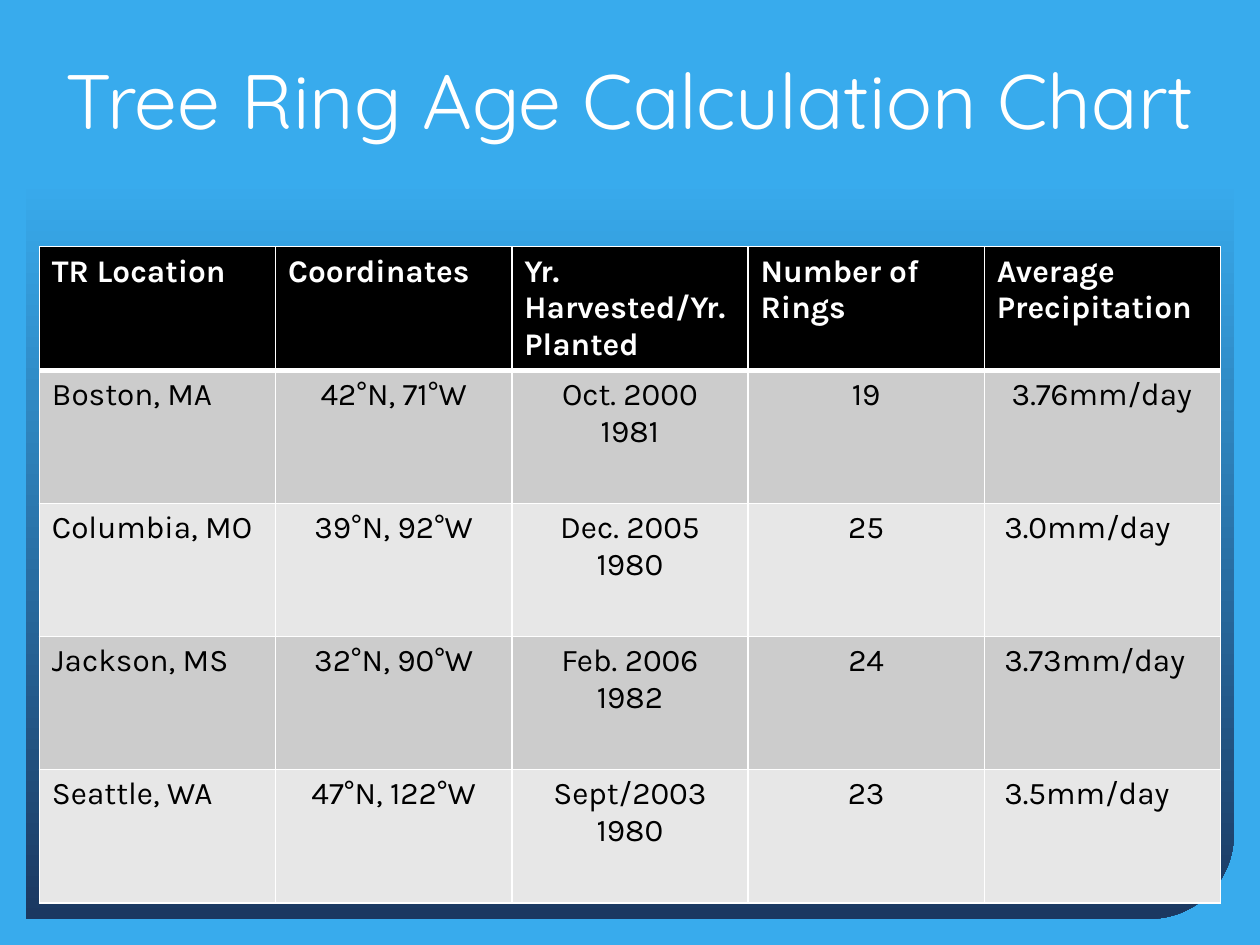
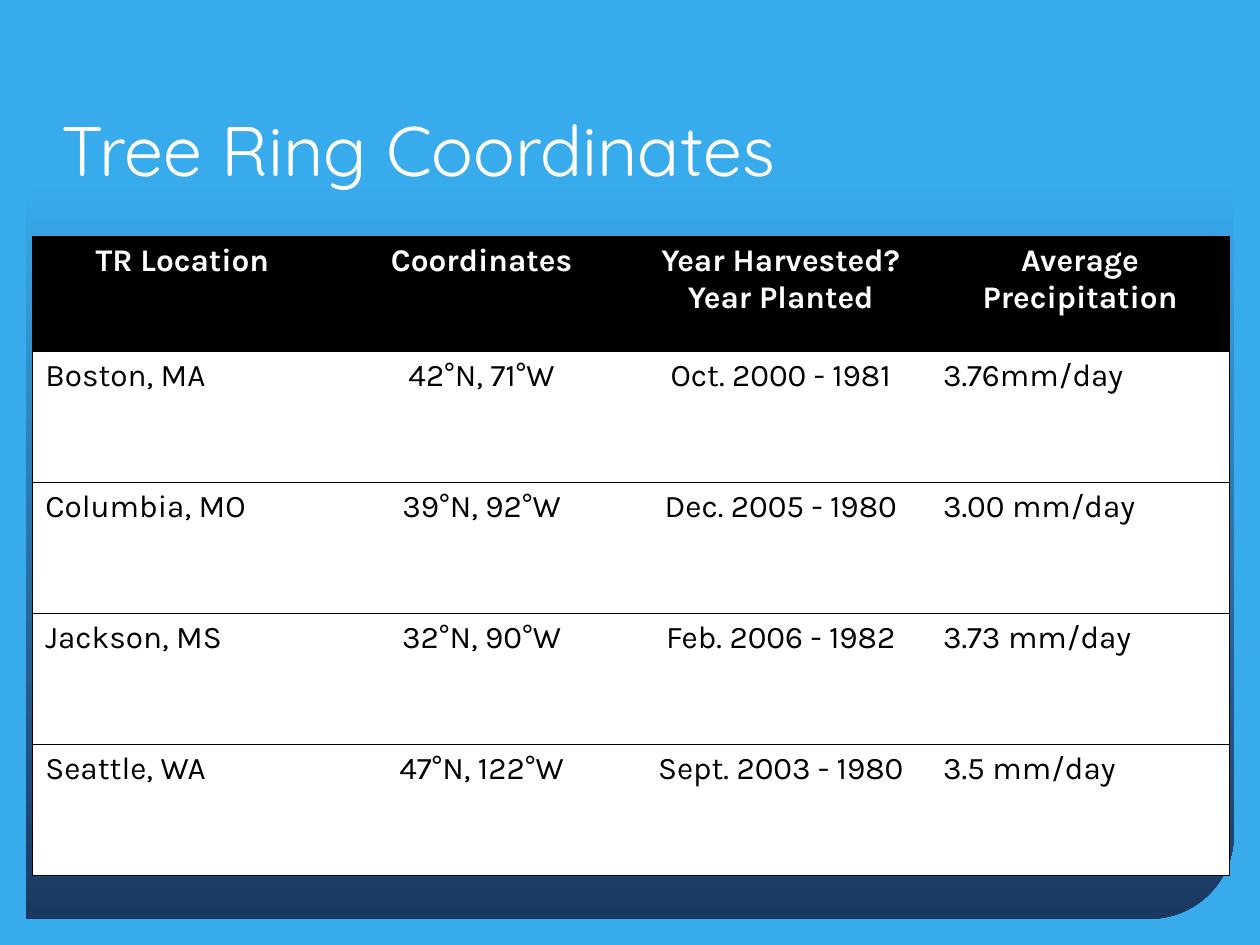
from dataclasses import dataclass

from lxml.etree import SubElement
from pptx import Presentation
from pptx.dml.color import RGBColor
from pptx.enum.shapes import MSO_SHAPE
from pptx.enum.text import MSO_ANCHOR, MSO_AUTO_SIZE, PP_ALIGN
from pptx.oxml.ns import qn
from pptx.util import Pt


@dataclass(frozen=True)
class Theme:
    sky: RGBColor = RGBColor(0x38, 0xAB, 0xED)
    navy: RGBColor = RGBColor(0x1B, 0x38, 0x61)
    black: RGBColor = RGBColor(0, 0, 0)
    white: RGBColor = RGBColor(0xFF, 0xFF, 0xFF)
    dark_band: RGBColor = RGBColor(0xCC, 0xCC, 0xCC)
    light_band: RGBColor = RGBColor(0xE7, 0xE7, 0xE7)
    title_font: str = "Quicksand"
    body_font: str = "Karla"
    chart_title_size: int = 44
    coordinates_title_size: int = 40
    cell_size: int = 18


THEME = Theme()
LEFT, CENTER = PP_ALIGN.LEFT, PP_ALIGN.CENTER

SITES = [
    ("Boston, MA", "42°N, 71°W"),
    ("Columbia, MO", "39°N, 92°W"),
    ("Jackson, MS", "32°N, 90°W"),
    ("Seattle, WA", "47°N, 122°W"),
]
AGE_HEADER = ("TR Location", "Coordinates", "Yr. Harvested/Yr. Planted",
              "Number of Rings", "Average Precipitation")
AGES = [
    ("Oct. 2000\n1981", "19", "3.76mm/day"),
    ("Dec. 2005\n1980", "25", "3.0mm/day"),
    ("Feb. 2006\n1982", "24", "3.73mm/day"),
    ("Sept/2003\n1980", "23", "3.5mm/day"),
]
COORDINATES_HEADER = ("TR Location", "Coordinates",
                      "Year Harvested?\nYear Planted", "Average Precipitation")
YEARS = [
    ("Oct. 2000 - 1981", "3.76mm/day"),
    ("Dec. 2005 - 1980", "3.00 mm/day"),
    ("Feb. 2006 - 1982", "3.73 mm/day"),
    ("Sept. 2003 - 1980", "3.5 mm/day"),
]


def add_run(p, text, font, size, color, bold=False):
    r = p.add_run()
    r.text = text
    r.font.name = font
    r.font.size = Pt(size)
    r.font.bold = bold
    r.font.color.rgb = color


def style_master(prs, slide):
    """Give the master its background and gradient panel, drawn first on slide."""
    master = prs.slide_master
    master.background.fill.solid()
    master.background.fill.fore_color.rgb = THEME.sky
    panel = slide.shapes.add_shape(MSO_SHAPE.ROUND_2_DIAG_RECTANGLE,
                                   Pt(15), Pt(15), Pt(690), Pt(510))
    panel.shadow.inherit = False
    panel.adjustments[0] = 0.094
    panel.adjustments[1] = 0
    panel.line.fill.background()
    panel.fill.gradient()
    panel.fill.gradient_angle = 270
    stops = [(0.17, THEME.sky), (1, THEME.navy)]
    for stop, (position, color) in zip(panel.fill.gradient_stops, stops):
        stop.position = position
        stop.color.rgb = color
    master.shapes._spTree.insert(2, panel._element)


def set_title(slide, text, box, size, align, anchor, indent=0):
    title = slide.shapes.title
    title.left, title.top, title.width, title.height = map(Pt, box)
    tf = title.text_frame
    tf.word_wrap = True
    tf.auto_size = MSO_AUTO_SIZE.NONE
    tf.vertical_anchor = anchor
    tf.margin_left = Pt(7.2 + indent)
    p = tf.paragraphs[0]
    p.alignment = align
    add_run(p, text, THEME.title_font, size, THEME.white)


def set_borders(cell, **sides):
    """Set sides L, R, T and B to a (colour, width) pair, or None for no line."""
    tc_pr = cell._tc.get_or_add_tcPr()
    for side in "LRTB":
        border = sides.get(side)
        ln = SubElement(tc_pr, qn(f"a:ln{side}"))
        if border is None:
            SubElement(ln, qn("a:noFill"))
            continue
        color, width = border
        ln.set("w", str(Pt(width)))
        fill = SubElement(ln, qn("a:solidFill"))
        SubElement(fill, qn("a:srgbClr"), val=str(color))


def fill_cell(cell, text, fill, color, align, bold):
    cell.fill.solid()
    cell.fill.fore_color.rgb = fill
    tf = cell.text_frame
    for i, line in enumerate(text.split("\n")):
        p = tf.paragraphs[0] if i == 0 else tf.add_paragraph()
        p.alignment = align
        add_run(p, line, THEME.body_font, THEME.cell_size, color, bold)


def add_site_table(slide, rows, origin, col_width, header_height, row_height,
                   header_align, bands, borders):
    """Draw a header and site rows; borders(row, col) gives a cell's sides."""
    n_rows, n_cols = len(rows), len(rows[0])
    height = header_height + row_height * (n_rows - 1)
    frame = slide.shapes.add_table(n_rows, n_cols, Pt(origin[0]), Pt(origin[1]),
                                   Pt(col_width * n_cols), Pt(height))
    table = frame.table
    table.horz_banding = False
    for column in table.columns:
        column.width = Pt(col_width)
    for i, row in enumerate(rows):
        table.rows[i].height = Pt(row_height if i else header_height)
        for j, text in enumerate(row):
            cell = table.cell(i, j)
            set_borders(cell, **borders(i, j))
            if i == 0:
                fill_cell(cell, text, THEME.black, THEME.white, header_align, True)
            else:
                align = LEFT if j in (0, n_cols - 1) else CENTER
                fill_cell(cell, text, bands[(i - 1) % len(bands)],
                          THEME.black, align, False)
    return table


def grid_borders(row, col):
    thin, thick = (THEME.white, 1), (THEME.white, 3)
    return {"L": thin, "R": thin,
            "T": thick if row == 1 else thin,
            "B": thick if row == 0 else thin}


def ruled_borders(row, col):
    line = (THEME.black, 0.75)
    return {"L": line if col == 0 else None,
            "R": line if col == len(COORDINATES_HEADER) - 1 else None,
            "T": line, "B": line}


def with_sites(header, details):
    return [header] + [site + detail for site, detail in zip(SITES, details)]


def build_age_chart(slide):
    table = add_site_table(slide, with_sites(AGE_HEADER, AGES), (22.5, 141), 135,
                           67.7, 76.1, LEFT,
                           (THEME.dark_band, THEME.light_band), grid_borders)
    for i in range(1, len(table.rows)):
        indent = 8.5 if i == 1 else 4.25
        table.cell(i, len(AGE_HEADER) - 1).margin_left = Pt(7.2 + indent)
    set_title(slide, "Tree Ring Age Calculation Chart", (22.5, 26.6, 675, 114),
              THEME.chart_title_size, CENTER, MSO_ANCHOR.TOP)


def build_coordinates(slide):
    set_title(slide, "Tree Ring Coordinates", (18.7, 30.2, 640, 82),
              THEME.coordinates_title_size, LEFT, MSO_ANCHOR.BOTTOM, indent=9)
    add_site_table(slide, with_sites(COORDINATES_HEADER, YEARS), (18.7, 135.2), 171,
                   65.6, 74.9, CENTER, (THEME.white,), ruled_borders)


def main():
    prs = Presentation()
    prs.slide_width, prs.slide_height = Pt(720), Pt(540)
    title_only = prs.slide_layouts[5]
    age_slide = prs.slides.add_slide(title_only)
    style_master(prs, age_slide)
    build_age_chart(age_slide)
    build_coordinates(prs.slides.add_slide(title_only))
    prs.save("out.pptx")


if __name__ == "__main__":
    main()
